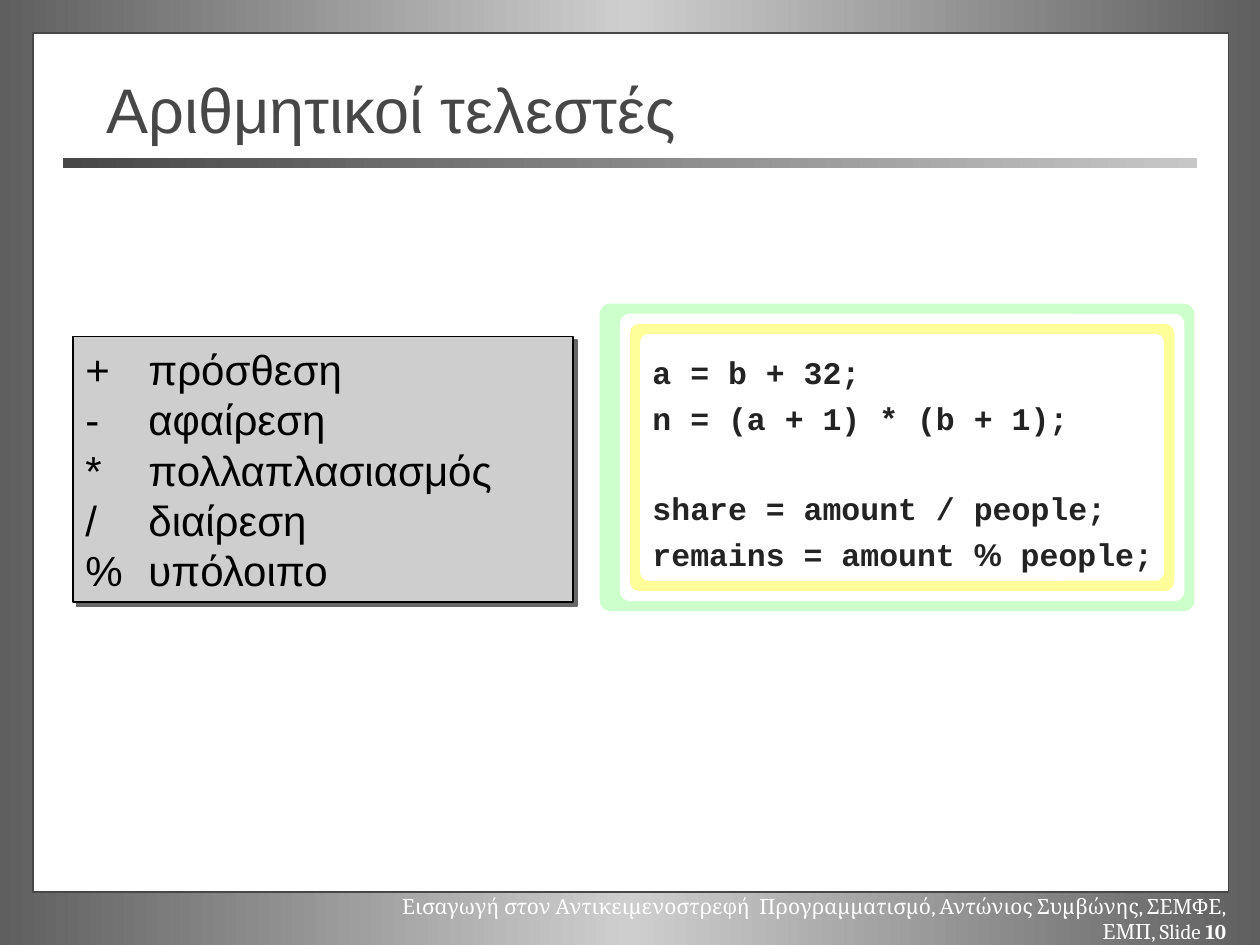
from lxml.etree import SubElement
from pptx import Presentation
from pptx.dml.color import RGBColor
from pptx.enum.shapes import MSO_SHAPE
from pptx.enum.text import MSO_ANCHOR, PP_ALIGN
from pptx.oxml.ns import qn
from pptx.util import Inches, Pt


def color(code):
    return RGBColor.from_string(code)


def shade(fill, node, codes):
    """Fill with evenly spaced gradient stops, left to right."""
    fill.gradient()
    fill.gradient_angle = 0
    stops = next(node.iter(qn("a:gsLst")))
    for old in list(stops):
        stops.remove(old)
    for i, code in enumerate(codes):
        stop = SubElement(stops, qn("a:gs"), pos=str(100000 * i // (len(codes) - 1)))
        SubElement(stop, qn("a:srgbClr"), val=code)


def write(frame, lines, size, ink, font="Arial", bold=False, gaps=(),
          align=PP_ALIGN.LEFT, anchor=MSO_ANCHOR.TOP, wrap=True):
    """Write lines; a line is a string or a list of (text, changes) runs."""
    frame.word_wrap = wrap
    frame.vertical_anchor = anchor
    for i, line in enumerate(lines):
        para = frame.paragraphs[0] if i == 0 else frame.add_paragraph()
        para.alignment = align
        if gaps:
            para.space_before = Pt(gaps[i])
        for text, change in [(line, {})] if isinstance(line, str) else line:
            run = para.add_run()
            run.text = text
            run.font.size = Pt(size)
            run.font.color.rgb = color(ink)
            run.font.name = change.get("font", font)
            run.font.bold = change.get("bold", bold)


class Deck:
    def __init__(self, wide, high):
        self.prs = Presentation()
        self.prs.slide_width = Inches(wide)
        self.prs.slide_height = Inches(high)
        self.slide = self.prs.slides.add_slide(self.prs.slide_layouts[6])

    def back(self, codes):
        shade(self.slide.background.fill, self.slide.element, codes)

    def box(self, at, fill, line=None, radius=None):
        kind = MSO_SHAPE.RECTANGLE if radius is None else MSO_SHAPE.ROUNDED_RECTANGLE
        shape = self.slide.shapes.add_shape(kind, *map(Inches, at))
        shape.shadow.inherit = False
        if radius is not None:
            shape.adjustments[0] = radius
        if isinstance(fill, str):
            shape.fill.solid()
            shape.fill.fore_color.rgb = color(fill)
        else:
            shade(shape.fill, shape.element, fill)
        if line:
            shape.line.color.rgb = color(line)
            shape.line.width = Pt(1)
        else:
            shape.line.fill.background()
        return shape

    def drop(self, shape, code, dist):
        """Give the shape a hard shadow to the lower right."""
        effects = next(shape.element.iter(qn("a:effectLst")))
        shadow = SubElement(effects, qn("a:outerShdw"), blurRad="0",
                            dist=str(Pt(dist)), dir="2700000", algn="ctr",
                            rotWithShape="0")
        SubElement(shadow, qn("a:srgbClr"), val=code)

    def text(self, at, lines, size, ink, **style):
        area = self.slide.shapes.add_textbox(*map(Inches, at))
        write(area.text_frame, lines, size, ink, **style)


def main():
    deck = Deck(10, 7.5)
    deck.back(["5F5F5F", "CECECE", "5F5F5F"])
    deck.box((0.26, 0.26, 9.49, 6.82), "FFFFFF", line="474747")
    footer = [("Εισαγωγή στον Αντικειμενοστρεφή  Προγραμματισμό, "
               "Αντώνιος Συμβώνης, ΣΕΜΦΕ, ΕΜΠ, Slide ", {}), ("10", {"bold": True})]
    deck.text((2.79, 7.04, 7.04, 0.3), [footer], 12, "FFFFFF",
              font="Cambria", align=PP_ALIGN.RIGHT)
    deck.box((0.5, 1.25, 9, 0.08), ["474747", "C7C7C7"])
    deck.text((0.75, 0.55, 8.5, 0.62), ["Αριθμητικοί τελεστές"], 36, "474747",
              anchor=MSO_ANCHOR.MIDDLE)

    # Nested code frames; the outermost has a wider left edge
    step = 0.08
    for i, fill in enumerate(["CCFFCC", "FFFFFF", "FFFF99", "FFFFFF"]):
        inset = step * i
        left = 4.84 + inset if i else 4.76
        deck.box((left, 2.41 + inset, 9.48 - inset - left, 2.44 - 2 * inset),
                 fill, radius=0.035)

    ops = {"+": "πρόσθεση", "-": "αφαίρεση", "*": "πολλαπλασιασμός",
           "/": "διαίρεση", "%": "υπόλοιπο"}
    panel = deck.box((0.58, 2.67, 3.97, 2.11), "CECECE", line="000000")
    deck.drop(panel, "676767", 2.8)
    write(panel.text_frame, [f"{sign}\t{name}" for sign, name in ops.items()],
          24, "000000", anchor=MSO_ANCHOR.MIDDLE, wrap=False)

    code = ["a = b + 32;", "n = (a + 1) * (b + 1);", "share = amount / people;",
            [("remains = amount ", {}), ("%", {"font": "Arial"}), (" people;", {})]]
    gap, row = 4.7, 25.1
    deck.text((5.08, 2.75, 4.58, 1.84), code, 18, "232323", font="Courier New",
              bold=True, gaps=[gap, gap, gap + row, gap])
    deck.prs.save("out.pptx")


if __name__ == "__main__":
    main()
